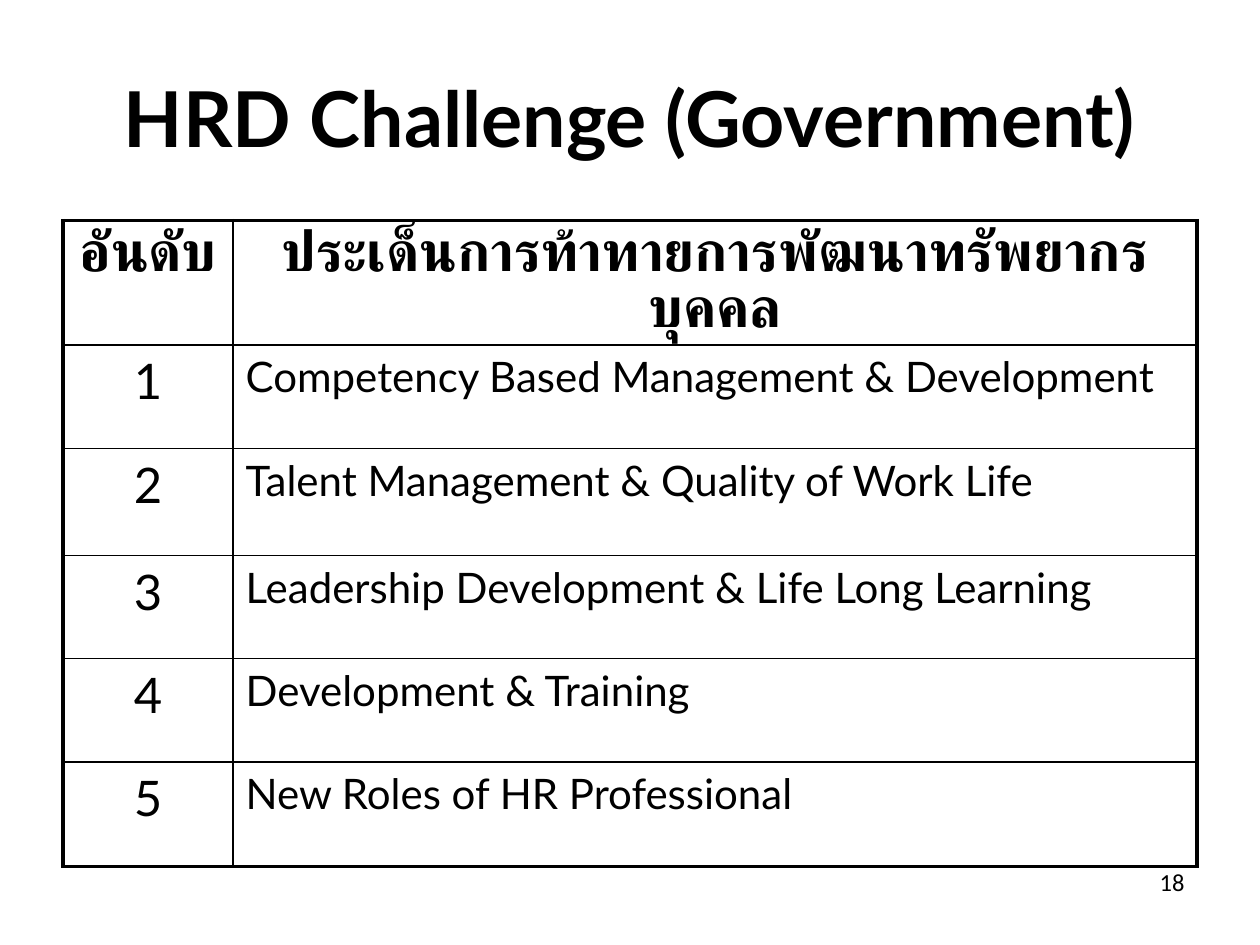
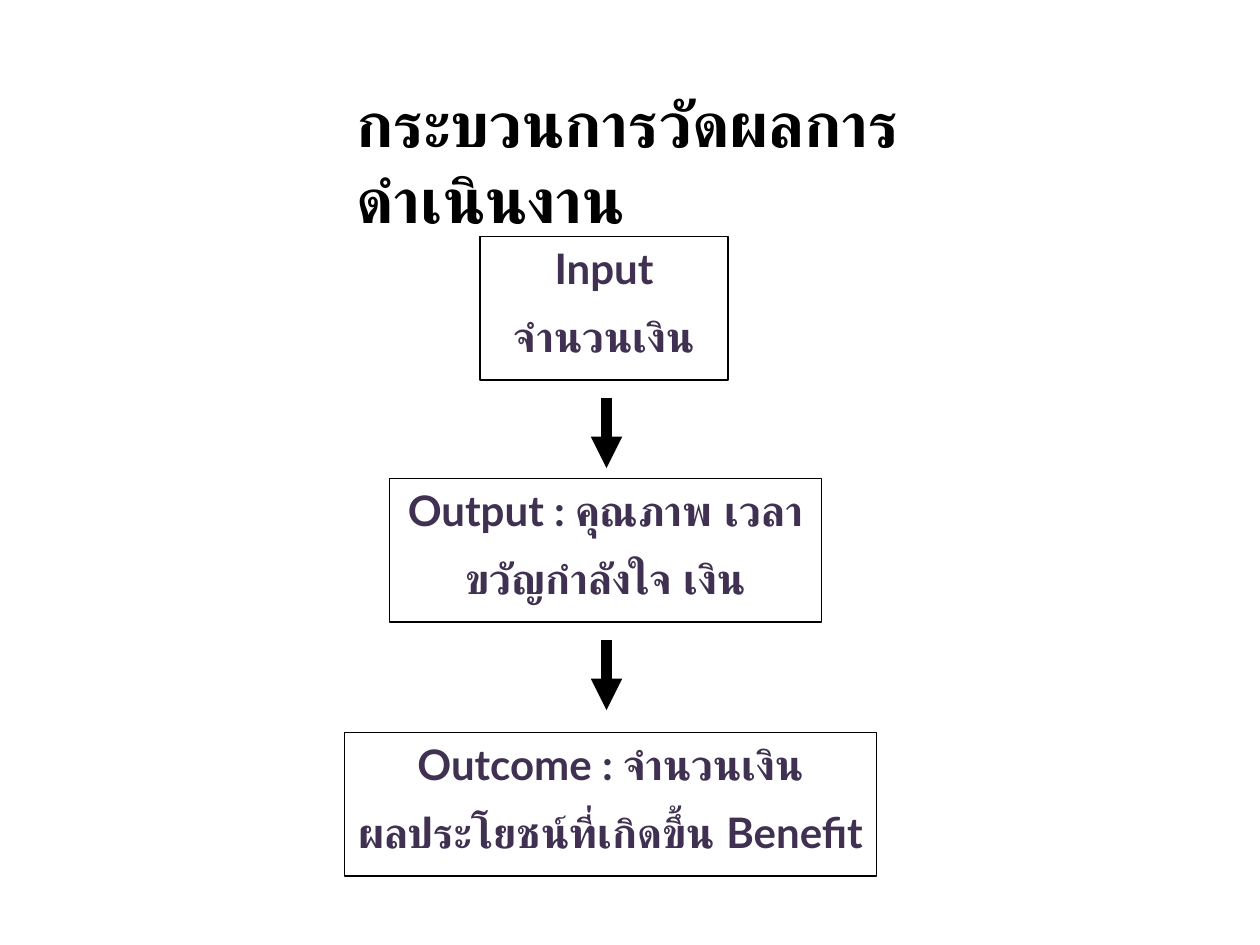
"""Build two slides on human resource development: a ranking table and a measurement flow."""
from dataclasses import dataclass

import lxml.etree
import pptx
import pptx.dml.color
import pptx.enum.shapes
import pptx.enum.text
import pptx.oxml.ns
import pptx.util

Pt = pptx.util.Pt
Align = pptx.enum.text.PP_ALIGN
Anchor = pptx.enum.text.MSO_ANCHOR
qn = pptx.oxml.ns.qn

BLACK = "000000"
WHITE = "FFFFFF"
PURPLE = "403152"
OUTER_BORDER = 2.25
INNER_BORDER = 1
STAGE_HEIGHT = 82.1
ARROW_X = 346.6
ARROW_GAP = 10
ARROW_LENGTH = 40.3


@dataclass(frozen=True)
class TextStyle:
    size: float
    align: Align
    color: str = BLACK
    bold: bool = False
    font: str = "Lato"
    space_after: float = 0
    line_height: float | None = None


@dataclass(frozen=True)
class Box:
    left: float
    top: float
    width: float
    height: float

    def lengths(self) -> tuple:
        return Pt(self.left), Pt(self.top), Pt(self.width), Pt(self.height)


@dataclass(frozen=True)
class Stage:
    left: float
    top: float
    width: float
    lines: str


HEADING = TextStyle(32, Align.CENTER, bold=True, line_height=32)
RANK = TextStyle(28, Align.CENTER)
CHALLENGE = TextStyle(24, Align.LEFT)
STAGE_TEXT = TextStyle(24, Align.CENTER, PURPLE, True, space_after=10)
PAGE_NUMBER = TextStyle(14, Align.RIGHT, font="Calibri")

COLUMN_WIDTHS = [97.2, 550.8]
ROW_HEIGHTS = [59.8, 59, 61.2, 59, 59, 59.8]
HEADINGS = ("อันดับ", "ประเด็นการท้าทายการพัฒนาทรัพยากรบุคคล")
CHALLENGES = [
    "Competency Based Management & Development",
    "Talent Management & Quality of Work Life",
    "Leadership Development & Life Long Learning",
    "Development & Training",
    "New Roles of HR Professional",
]
STAGES = [
    Stage(274.3, 135.1, 141.8, "Input\nจำนวนเงิน"),
    Stage(222.5, 273.4, 247, "Output : คุณภาพ เวลา\nขวัญกำลังใจ เงิน"),
    Stage(196.9, 418.6, 303.8, "Outcome : จำนวนเงิน\nผลประโยชน์ที่เกิดขึ้น Benefit"),
]


def rgb(color: str) -> pptx.dml.color.RGBColor:
    return pptx.dml.color.RGBColor.from_string(color)


def paint(part, color: str) -> None:
    part.fill.solid()
    part.fill.fore_color.rgb = rgb(color)


def write(frame, text: str, style: TextStyle) -> None:
    frame.text = text
    for paragraph in frame.paragraphs:
        paragraph.alignment = style.align
        paragraph.space_after = Pt(style.space_after)
        if style.line_height:
            paragraph.line_spacing = Pt(style.line_height)
        paragraph.font.name = style.font
        paragraph.font.size = Pt(style.size)
        paragraph.font.bold = style.bold
        paragraph.font.color.rgb = rgb(style.color)


def add_titled_slide(deck, text: str, box: Box, style: TextStyle, anchor: Anchor):
    slide = deck.slides.add_slide(deck.slide_layouts.get_by_name("Title Only"))
    title = slide.shapes.title
    title.left, title.top, title.width, title.height = box.lengths()
    write(title.text_frame, text, style)
    title.text_frame.auto_size = pptx.enum.text.MSO_AUTO_SIZE.NONE
    title.text_frame.vertical_anchor = anchor
    return slide


def set_borders(cell, widths: dict[str, float]) -> None:
    properties = cell._tc.get_or_add_tcPr()
    for position, (side, width) in enumerate(widths.items()):
        border = lxml.etree.Element(qn(f"a:{side}"), w=str(Pt(width)))
        fill = lxml.etree.SubElement(border, qn("a:solidFill"))
        lxml.etree.SubElement(fill, qn("a:srgbClr"), val=BLACK)
        properties.insert(position, border)


def add_challenge_table(slide) -> None:
    rows = [HEADINGS] + [(str(rank), text) for rank, text in enumerate(CHALLENGES, 1)]
    box = Box(36, 126, sum(COLUMN_WIDTHS), sum(ROW_HEIGHTS))
    table = slide.shapes.add_table(len(rows), len(HEADINGS), *box.lengths()).table
    table.first_row = table.horz_banding = False
    for column, width in zip(table.columns, COLUMN_WIDTHS):
        column.width = Pt(width)
    for row, height in zip(table.rows, ROW_HEIGHTS):
        row.height = Pt(height)
    for r, texts in enumerate(rows):
        for c, text in enumerate(texts):
            cell = table.cell(r, c)
            write(cell.text_frame, text, HEADING if r == 0 else (RANK, CHALLENGE)[c])
            paint(cell, WHITE)
            on_edge = {
                "lnL": c == 0,
                "lnR": c == len(texts) - 1,
                "lnT": r == 0,
                "lnB": r == len(rows) - 1,
            }
            set_borders(cell, {side: OUTER_BORDER if edge else INNER_BORDER
                               for side, edge in on_edge.items()})


def add_page_number(slide, number: str) -> None:
    frame = slide.shapes.add_textbox(*Box(516.2, 491.8, 167.8, 37.4).lengths()).text_frame
    frame.word_wrap = True
    write(frame, number, PAGE_NUMBER)


def add_stage(slide, stage: Stage) -> None:
    box = Box(stage.left, stage.top, stage.width, STAGE_HEIGHT)
    panel = slide.shapes.add_shape(pptx.enum.shapes.MSO_SHAPE.RECTANGLE, *box.lengths())
    panel.shadow.inherit = False
    paint(panel, WHITE)
    panel.line.color.rgb = rgb(BLACK)
    panel.line.width = Pt(0.75)
    panel.text_frame.word_wrap = False
    panel.text_frame.vertical_anchor = Anchor.TOP
    write(panel.text_frame, stage.lines, STAGE_TEXT)


def add_arrow_below(slide, stage: Stage) -> None:
    start = stage.top + STAGE_HEIGHT + ARROW_GAP
    arrow = slide.shapes.add_connector(
        pptx.enum.shapes.MSO_CONNECTOR.STRAIGHT,
        Pt(ARROW_X), Pt(start), Pt(ARROW_X), Pt(start + ARROW_LENGTH))
    arrow.line.color.rgb = rgb(BLACK)
    arrow.line.width = Pt(6)
    lxml.etree.SubElement(arrow.line._get_or_add_ln(), qn("a:tailEnd"), type="triangle")
    lxml.etree.SubElement(arrow._element.spPr, qn("a:effectLst"))


def main() -> None:
    deck = pptx.Presentation()
    deck.slide_width, deck.slide_height = Pt(720), Pt(540)

    challenges = add_titled_slide(
        deck, "HRD Challenge (Government)", Box(36, 21.6, 648, 90),
        TextStyle(44, Align.CENTER, bold=True), Anchor.MIDDLE)
    paint(challenges.shapes.title, WHITE)
    add_challenge_table(challenges)
    add_page_number(challenges, "18")

    measurement = add_titled_slide(
        deck, "กระบวนการวัดผลการดำเนินงาน", Box(196.6, 44.8, 334, 51),
        TextStyle(36, Align.LEFT, bold=True), Anchor.TOP)
    for stage in STAGES:
        add_stage(measurement, stage)
    for stage in STAGES[:-1]:
        add_arrow_below(measurement, stage)

    deck.save("out.pptx")


if __name__ == "__main__":
    main()
